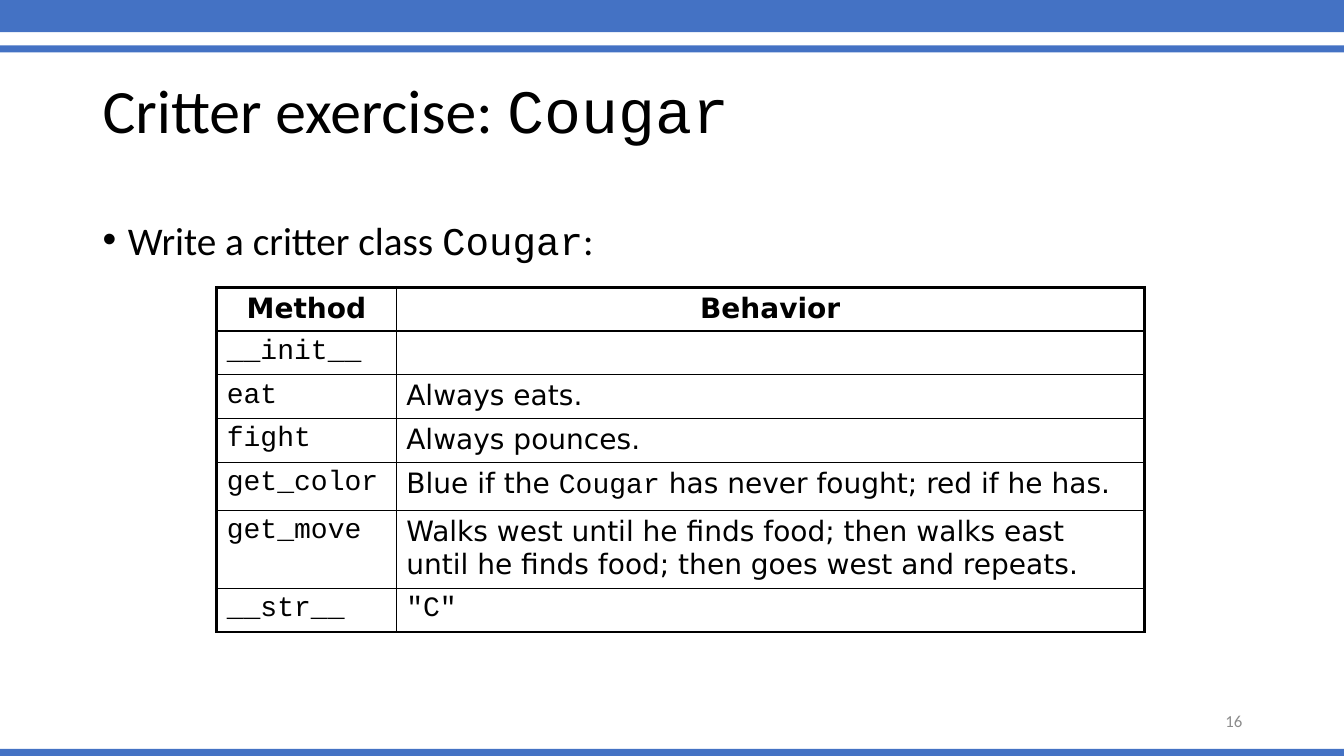
import pptx
import pptx.dml.color
import pptx.enum.shapes
import pptx.enum.text
import pptx.oxml.ns
import pptx.util
from lxml import etree
from pptx.util import Inches

ALIGN = pptx.enum.text.PP_ALIGN
ANCHOR = pptx.enum.text.MSO_ANCHOR
BODY_FONT, CODE_FONT, TABLE_FONT = "Calibri", "Courier New", "DejaVu Sans"
BLUE, BLACK, GRAY = "4472C4", "000000", "8C8C8C"

# Each cell is a list of (text, font) runs
METHODS = [
    ("__init__", []),
    ("eat", [("Always eats.", TABLE_FONT)]),
    ("fight", [("Always pounces.", TABLE_FONT)]),
    ("get_color", [("Blue if the ", TABLE_FONT), ("Cougar", CODE_FONT),
                   (" has never fought; red if he has.", TABLE_FONT)]),
    ("get_move", [("Walks west until he finds food; then walks east until he "
                   "finds food; then goes west and repeats.", TABLE_FONT)]),
    ("__str__", [('"C"', CODE_FONT)]),
]
COLUMN_WIDTHS = [1.78, 7.42]
ROW_HEIGHTS = [0.43, 0.43, 0.43, 0.43, 0.48, 0.77, 0.43]


def color(value):
    return pptx.dml.color.RGBColor.from_string(value)


def add_runs(paragraph, runs, size, text_color=BLACK, bold=False):
    for text, font in runs:
        run = paragraph.add_run()
        run.text = text
        run.font.name = font
        run.font.size = pptx.util.Pt(size)
        run.font.bold = bold
        run.font.color.rgb = color(text_color)


def add_bar(slide, top, height):
    bar = slide.shapes.add_shape(
        pptx.enum.shapes.MSO_SHAPE.RECTANGLE,
        0, Inches(top), Inches(13.33), Inches(height))
    bar.shadow.inherit = False
    bar.fill.solid()
    bar.fill.fore_color.rgb = color(BLUE)
    bar.line.fill.background()


def add_text(slide, box, runs, size, text_color=BLACK,
             anchor=ANCHOR.MIDDLE, align=ALIGN.LEFT):
    shape = slide.shapes.add_textbox(*(Inches(length) for length in box))
    frame = shape.text_frame
    frame.word_wrap = True
    frame.vertical_anchor = anchor
    paragraph = frame.paragraphs[0]
    paragraph.alignment = align
    add_runs(paragraph, runs, size, text_color)
    return paragraph


def add_bullet(paragraph, indent):
    properties = paragraph._p.get_or_add_pPr()
    properties.set("marL", str(Inches(indent)))
    properties.set("indent", str(-Inches(indent)))
    font = etree.SubElement(properties, pptx.oxml.ns.qn("a:buFont"))
    font.set("typeface", "Arial")
    bullet = etree.SubElement(properties, pptx.oxml.ns.qn("a:buChar"))
    bullet.set("char", "•")


def set_borders(cell, widths):
    properties = cell._tc.get_or_add_tcPr()
    for side, width in widths.items():
        line = etree.SubElement(properties, pptx.oxml.ns.qn("a:ln" + side))
        line.set("w", str(pptx.util.Pt(width)))
        fill = etree.SubElement(line, pptx.oxml.ns.qn("a:solidFill"))
        etree.SubElement(fill, pptx.oxml.ns.qn("a:srgbClr")).set("val", BLACK)


def add_method_table(slide, left, top):
    rows = [([("Method", TABLE_FONT)], [("Behavior", TABLE_FONT)])]
    rows += [([(name, CODE_FONT)], behavior) for name, behavior in METHODS]
    last_row, last_column = len(rows) - 1, len(COLUMN_WIDTHS) - 1
    table = slide.shapes.add_table(
        len(rows), len(COLUMN_WIDTHS), Inches(left), Inches(top),
        Inches(sum(COLUMN_WIDTHS)), Inches(sum(ROW_HEIGHTS))).table
    table.first_row = table.horz_banding = False
    for column, width in zip(table.columns, COLUMN_WIDTHS):
        column.width = Inches(width)
    for row, height in zip(table.rows, ROW_HEIGHTS):
        row.height = Inches(height)

    for i, row in enumerate(rows):
        for j, runs in enumerate(row):
            cell = table.cell(i, j)
            # Thick frame outside, thin lines inside
            outer = {"L": j == 0, "R": j == last_column,
                     "T": i == 0, "B": i == last_row}
            set_borders(cell, {side: 2.25 if edge else 1
                               for side, edge in outer.items()})
            cell.fill.background()
            paragraph = cell.text_frame.paragraphs[0]
            paragraph.alignment = ALIGN.CENTER if i == 0 else ALIGN.LEFT
            add_runs(paragraph, runs, 20, bold=i == 0)


def main():
    presentation = pptx.Presentation()
    presentation.slide_width = Inches(13.33)
    presentation.slide_height = Inches(7.5)
    slide = presentation.slides.add_slide(presentation.slide_layouts[6])

    # Bars at the top and bottom edges
    for top, height in [(-0.06, 0.38), (0.45, 0.07), (7.43, 0.07)]:
        add_bar(slide, top, height)

    # Title
    title = add_text(slide, (0.92, 0.4, 11.5, 1.45),
                     [("Critter exercise: ", BODY_FONT),
                      ("Cougar", CODE_FONT)], 44)
    title.line_spacing = 0.9

    # Task
    task = add_text(slide, (0.92, 2, 11.5, 4.76),
                    [("Write a critter class ", BODY_FONT),
                     ("Cougar", CODE_FONT), (":", BODY_FONT)],
                    28, anchor=ANCHOR.TOP)
    task.line_spacing = 1.2
    task.space_before = pptx.util.Pt(10)
    add_bullet(task, 0.25)

    # Methods and slide number
    add_method_table(slide, 2.15, 2.85)
    add_text(slide, (9.42, 6.95, 3, 0.4), [("16", BODY_FONT)], 12, GRAY,
             align=ALIGN.RIGHT)

    presentation.save("out.pptx")


if __name__ == "__main__":
    main()
